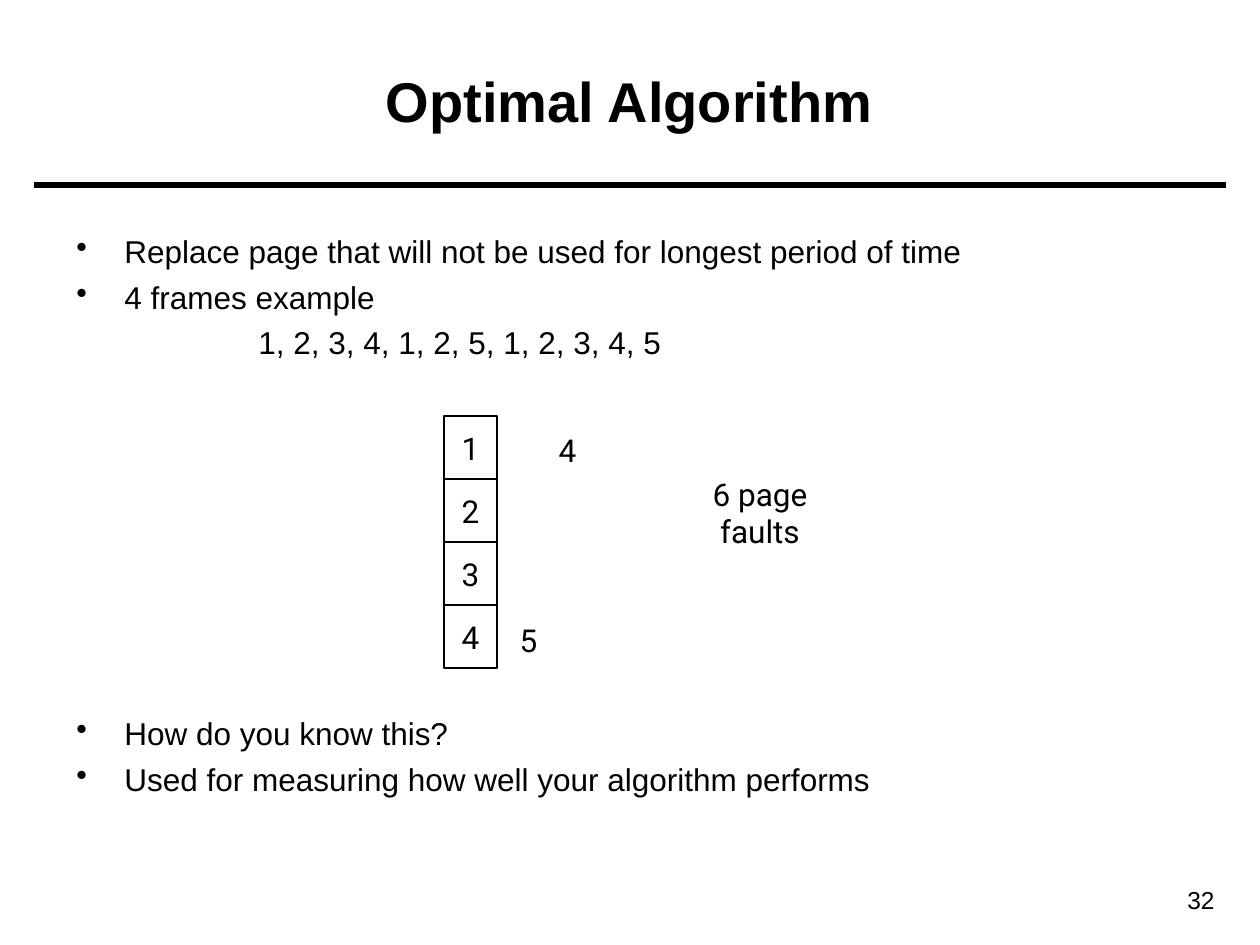
from dataclasses import dataclass

from lxml.etree import SubElement
from pptx import Presentation
from pptx.dml.color import RGBColor
from pptx.enum.shapes import MSO_CONNECTOR, MSO_SHAPE
from pptx.enum.text import MSO_ANCHOR, PP_ALIGN
from pptx.oxml.ns import qn
from pptx.util import Emu, Pt


@dataclass(frozen=True)
class Theme:
    ink: RGBColor = RGBColor(0, 0, 0)
    paper: RGBColor = RGBColor(255, 255, 255)
    prose: str = "Arial"
    figure: str = "Roboto"
    heading: int = 32
    body: int = 18
    footer: int = 14
    rule: float = 3
    border: float = 0.75
    gap: float = 4.4


def px(length):
    return Emu(round(length * 914400 / 126))


def assign(target, values):
    for name, value in values.items():
        setattr(target, name, value)


class SlideBuilder:
    """Draws themed elements on the current slide."""

    def __init__(self, theme, slide):
        self.theme = theme
        self.slide = slide

    def add_wording(self, paragraph, wording, align=PP_ALIGN.LEFT, **font):
        paragraph.alignment = align
        run = paragraph.add_run()
        run.text = wording
        size = Pt(font.pop("size", self.theme.body))
        assign(run.font, {"name": self.theme.prose, "size": size, **font})
        run.font.color.rgb = self.theme.ink

    def frame(self, box, anchor=MSO_ANCHOR.MIDDLE, wrap=True):
        text_frame = self.slide.shapes.add_textbox(*map(px, box)).text_frame
        assign(text_frame, {"word_wrap": wrap, "vertical_anchor": anchor})
        return text_frame

    def label(self, box, wording, align=PP_ALIGN.CENTER, wrap=True,
              anchor=MSO_ANCHOR.MIDDLE, **font):
        text_frame = self.frame(box, anchor, wrap)
        self.add_wording(text_frame.paragraphs[0], wording, align, **font)

    def points(self, box, entries):
        text_frame = self.frame(box, MSO_ANCHOR.TOP)
        for index, (wording, bullet, margin, before) in enumerate(entries):
            point = text_frame.add_paragraph() if index else text_frame.paragraphs[0]
            self.add_wording(point, wording)
            point.space_before = Pt(before)
            properties = point._p.get_or_add_pPr()
            properties.set("marL", str(px(margin)))
            properties.set("indent", str(-px(margin) if bullet else 0))
            if bullet:
                SubElement(properties, qn("a:buChar"), char=bullet)
            else:
                SubElement(properties, qn("a:buNone"))

    def cell(self, box, wording):
        cell = self.slide.shapes.add_shape(MSO_SHAPE.RECTANGLE, *map(px, box))
        cell.shadow.inherit = False
        cell.fill.solid()
        cell.fill.fore_color.rgb = self.theme.paper
        cell.line.color.rgb = self.theme.ink
        cell.line.width = Pt(self.theme.border)
        assign(cell.text_frame, {"word_wrap": False, "vertical_anchor": MSO_ANCHOR.MIDDLE})
        self.add_wording(cell.text_frame.paragraphs[0], wording, PP_ALIGN.CENTER,
                         name=self.theme.figure)

    def rule(self, start, end):
        rule = self.slide.shapes.add_connector(
            MSO_CONNECTOR.STRAIGHT, *map(px, (*start, *end)))
        rule.line.color.rgb = self.theme.ink
        rule.line.width = Pt(self.theme.rule)
        SubElement(rule._element.spPr, qn("a:effectLst"))


def main():
    theme = Theme()
    deck = Presentation()
    assign(deck, {"slide_width": px(1260), "slide_height": px(945)})
    builder = SlideBuilder(theme, deck.slides.add_slide(deck.slide_layouts[6]))

    builder.rule((34, 185), (1226, 185))
    builder.label((1096, 879, 131, 43), "32", PP_ALIGN.RIGHT,
                  anchor=MSO_ANCHOR.TOP, size=theme.footer)
    builder.label((44, 21, 1171, 158), "Optimal Algorithm", size=theme.heading, bold=True)
    builder.points((64, 226, 1134, 624), [
        ("Replace page that will not be used for longest period of time", "•", 48, theme.gap),
        ("4 frames example", "•", 48, theme.gap),
        ("1, 2, 3, 4, 1, 2, 5, 1, 2, 3, 4, 5", None, 182, theme.gap),
        ("How do you know this?", "•", 48, 202),
        ("Used for measuring how well your algorithm performs", "•", 48, theme.gap),
    ])

    for row, page in enumerate("1234"):
        builder.cell((444, 416 + 63 * row, 53, 63), page)
    for box, replacement in (((546, 425, 43, 50), "4"), ((507, 615, 43, 50), "5")):
        builder.label(box, replacement, wrap=False, name=theme.figure)
    builder.label((660, 469, 200, 87), "6 page faults", name=theme.figure)

    deck.save("out.pptx")


if __name__ == "__main__":
    main()
